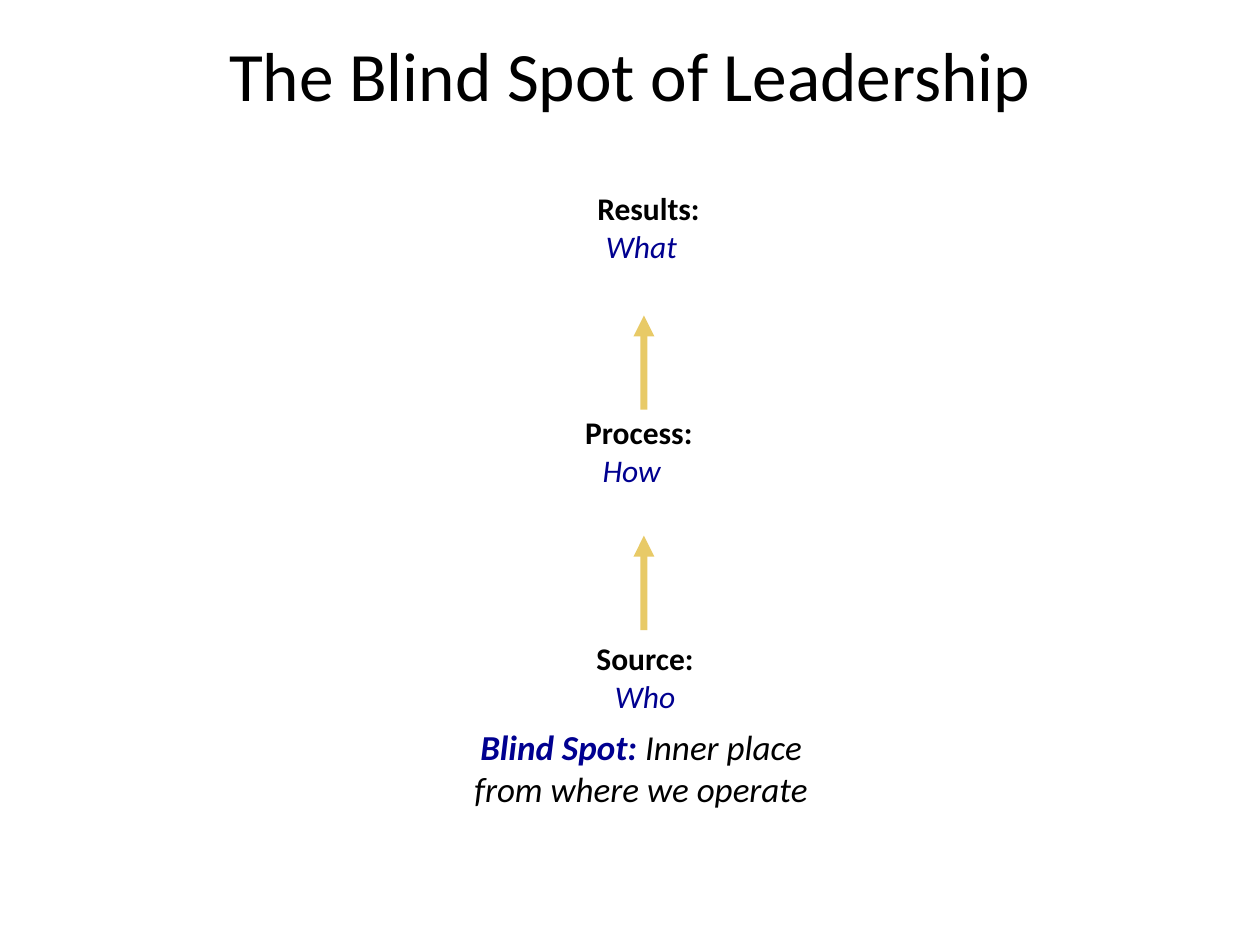
from dataclasses import dataclass

from lxml import etree
from pptx import Presentation
from pptx import util as u
from pptx.dml.color import RGBColor
from pptx.enum import shapes, text
from pptx.oxml.ns import qn

FONT = "Calibri"
BLACK, NAVY, GOLD = "000000", "000090", "DDAF19"
INDENT = 0.1


@dataclass
class Run:
    words: str
    size: float = 18
    color: str = BLACK
    bold: bool = False
    italic: bool = False


@dataclass
class Para:
    runs: list[Run]
    indent: float = INDENT
    after: float = 0


@dataclass
class Box:
    """A text block; lengths in centimetres."""
    left: float
    top: float
    width: float
    height: float
    paras: list[Para]


def rgb(value: str) -> RGBColor:
    return RGBColor.from_string(value)


def add_run(p, run: Run) -> None:
    """Add a run, turning each newline into a line break."""
    for i, line in enumerate(run.words.split("\n")):
        if i:
            p.add_line_break()
        r = p.add_run()
        r.text = line
        r.font.name, r.font.size = FONT, u.Pt(run.size)
        r.font.bold, r.font.italic = run.bold, run.italic
        r.font.color.rgb = rgb(run.color)


def add_box(s, box: Box) -> None:
    sp = s.shapes.add_textbox(u.Cm(box.left), u.Cm(box.top),
                              u.Cm(box.width), u.Cm(box.height))
    tf = sp.text_frame
    tf.word_wrap = True
    tf.margin_left = tf.margin_top = tf.margin_bottom = 0
    tf.margin_right = u.Cm(INDENT)
    for i, para in enumerate(box.paras):
        p = tf.add_paragraph() if i else tf.paragraphs[0]
        p.alignment = text.PP_ALIGN.CENTER
        p.space_after = u.Pt(para.after)
        p._p.get_or_add_pPr().set("marL", str(u.Cm(para.indent)))
        for run in para.runs:
            add_run(p, run)


def add_up_arrow(s, x: float, bottom: float, length: float) -> None:
    c = s.shapes.add_connector(shapes.MSO_CONNECTOR.STRAIGHT, u.Cm(x), u.Cm(bottom),
                               u.Cm(x), u.Cm(bottom - length))
    c.line.width = u.Pt(4)
    c.line.color.rgb = rgb(GOLD)
    ln = c.line._ln
    color = ln.find(".//" + qn("a:srgbClr"))
    etree.SubElement(color, qn("a:alpha"), val="65000")
    etree.SubElement(ln, qn("a:tailEnd"), type="triangle")
    etree.SubElement(c._element.spPr, qn("a:effectLst"))


def level(heading: str, question: str, indent: float = INDENT, after: float = 0) -> list[Para]:
    """Bold heading above its italic question word."""
    return [Para([Run(heading, bold=True)], indent),
            Para([Run(question, color=NAVY, italic=True)], after=after)]


def main() -> None:
    prs = Presentation()
    prs.slide_width, prs.slide_height = u.Cm(25.4), u.Cm(19.05)
    s = prs.slides.add_slide(prs.slide_layouts[6])

    blind_spot = Para([Run("Blind Spot: ", 20, NAVY, True, True),
                       Run("Inner place \nfrom where we operate ", 20, italic=True)], after=6)
    boxes = [
        Box(1.27, 0.65, 22.86, 3.18, [Para([Run("The Blind Spot of Leadership", 39.6)])]),
        Box(7.19, 12.88, 11.63, 3.91, level("Source:", "Who", after=6) + [blind_spot]),
        Box(10.64, 8.33, 4.19, 2.06, level("Process:", "How", indent=0.39)),
        Box(10.95, 3.81, 3.96, 2.06, level("Results:", "What", indent=0.39)),
    ]
    for box in boxes:
        add_box(s, box)
    for bottom in (8.26, 12.7):
        add_up_arrow(s, x=12.98, bottom=bottom, length=1.9)

    prs.save("out.pptx")


if __name__ == "__main__":
    main()
